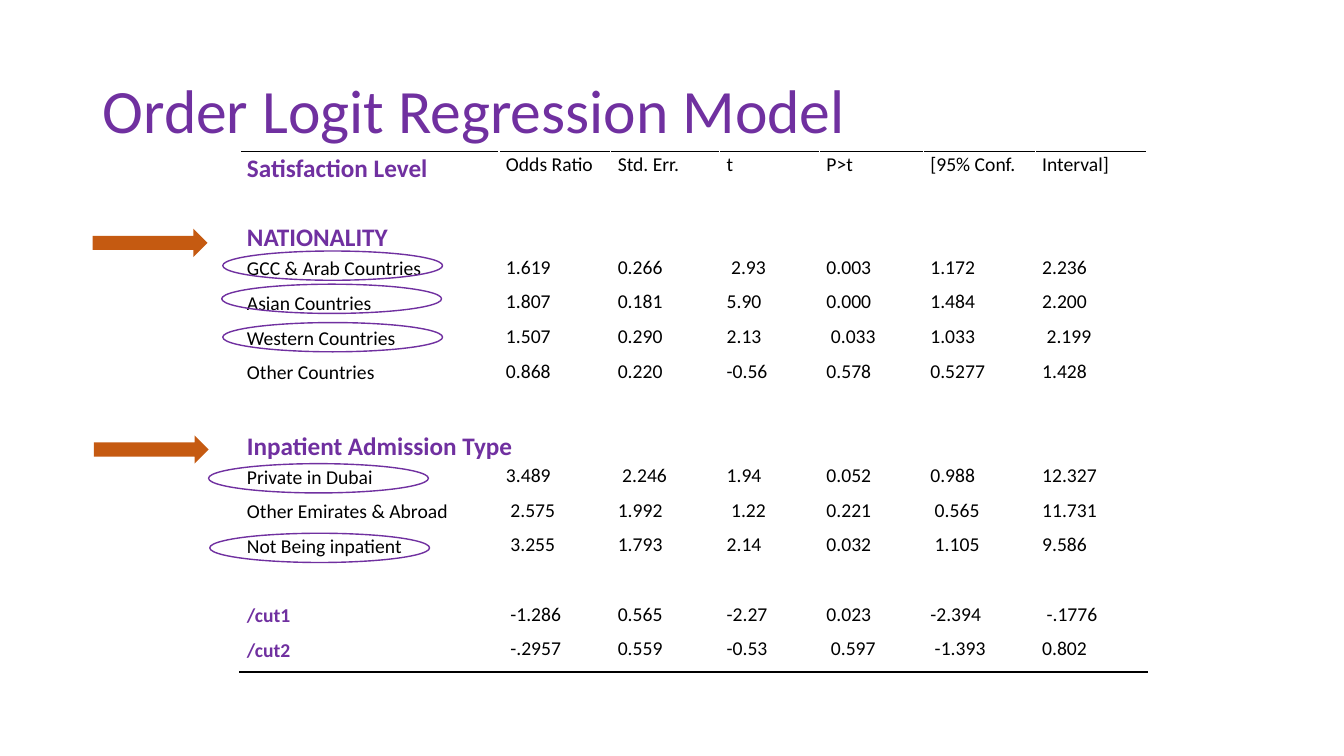
"""Builds the slide with the ordered logit regression table."""
from lxml import etree
from pptx import Presentation
from pptx.dml.color import RGBColor
from pptx.enum.shapes import MSO_SHAPE
from pptx.enum.text import MSO_ANCHOR
from pptx.oxml.ns import qn
from pptx.util import Pt

PURPLE = RGBColor(0x70, 0x30, 0xA0)
ORANGE = RGBColor(0xC5, 0x5A, 0x11)
BLACK = RGBColor(0, 0, 0)
MIDDLE = MSO_ANCHOR.MIDDLE
ARROW = MSO_SHAPE.RIGHT_ARROW
ELLIPSE = MSO_SHAPE.OVAL

TITLE_FORMAT = {"name": "Calibri", "size": Pt(44), "bold": False, "color": PURPLE}
HEADING_FORMAT = {**TITLE_FORMAT, "size": Pt(18), "bold": True}
CUT_FORMAT = {**HEADING_FORMAT, "size": Pt(14)}
BODY_FORMAT = {**CUT_FORMAT, "bold": False, "color": BLACK}

COLUMN_WIDTHS = [185, 79.9, 77.8, 71.3, 74.2, 79.9, 79.9]
ROW_HEIGHT = 24.83
HEADINGS = {"Satisfaction Level", "NATIONALITY", "Inpatient Admission Type"}
ROWS = [
    ["Satisfaction Level", "Odds Ratio", "Std. Err.", "t", "P>t", "[95% Conf.", "Interval]"],
    [],
    ["NATIONALITY"],
    ["GCC & Arab Countries", "1.619", "0.266", " 2.93", "0.003", "1.172", "2.236"],
    ["Asian Countries", "1.807", "0.181", "5.90", "0.000", "1.484", "2.200"],
    ["Western Countries", "1.507", "0.290", "2.13", " 0.033", "1.033", " 2.199"],
    ["Other Countries", "0.868", "0.220", "-0.56", "0.578", "0.5277", "1.428"],
    [],
    ["Inpatient Admission Type"],
    ["Private in Dubai", "3.489", " 2.246", "1.94", "0.052", "0.988", "12.327"],
    ["Other Emirates & Abroad", " 2.575", "1.992", " 1.22", "0.221", " 0.565", "11.731"],
    ["Not Being inpatient", " 3.255", "1.793", "2.14", "0.032", " 1.105", "9.586"],
    [],
    ["/cut1", " -1.286", "0.565", "-2.27", "0.023", "-2.394", " -.1776"],
    ["/cut2", " -.2957", "0.559", "-0.53", " 0.597", " -1.393", "0.802"],
]
ARROW_PLACES = [(66.2, 163.4), (67, 311)]
ELLIPSE_PLACES = [(159.1, 179.3), (158.4, 203), (149, 331.2), (149.8, 380.9), (159.1, 230.4)]


def set_format(font, values):
    """Apply format values to a font."""
    for name, value in values.items():
        if name == "color":
            font.color.rgb = value
        else:
            setattr(font, name, value)


def write_text(para, text, values, spacing):
    """Write one formatted span into a paragraph."""
    para.line_spacing = spacing
    span = para.add_run()
    span.text = text
    set_format(span.font, values)


def add_title(page, text):
    """Add the title box."""
    box = page.shapes.add_textbox(Pt(66.2), Pt(28.8), Pt(828), Pt(104.4))
    frame = box.text_frame
    frame.word_wrap = True
    frame.vertical_anchor = MIDDLE
    write_text(frame.paragraphs[0], text, TITLE_FORMAT, 0.9)


def add_border(cell, tag):
    """Draw a black rule on one side of a cell."""
    line = etree.Element(qn(tag), w=str(Pt(1)))
    fill = etree.SubElement(line, qn("a:solidFill"))
    etree.SubElement(fill, qn("a:srgbClr"), val=str(BLACK))
    cell._tc.get_or_add_tcPr().insert(0, line)


def clear_cell(cell):
    """Remove the fill and set tight margins."""
    cell.fill.background()
    margins = {"margin_left": 5, "margin_right": 5, "margin_top": 0, "margin_bottom": 0}
    for name, value in margins.items():
        setattr(cell, name, Pt(value))
    set_format(cell.text_frame.paragraphs[0].font, BODY_FORMAT)


def label_format(text):
    """Choose the format of a row label."""
    if text in HEADINGS:
        return HEADING_FORMAT
    return CUT_FORMAT if text.startswith("/") else BODY_FORMAT


def add_results_table(page):
    """Add the regression table."""
    width, height = sum(COLUMN_WIDTHS), ROW_HEIGHT * len(ROWS)
    table = page.shapes.add_table(
        len(ROWS), len(COLUMN_WIDTHS), Pt(171.4), Pt(108), Pt(width), Pt(height)).table
    table.first_row = table.horz_banding = False
    for column, column_width in zip(table.columns, COLUMN_WIDTHS):
        column.width = Pt(column_width)
    for row, texts in zip(table.rows, ROWS):
        row.height = Pt(ROW_HEIGHT)
        cells = list(row.cells)
        for cell in cells:
            clear_cell(cell)
        if len(texts) == 1:
            cells[0].merge(cells[-1])
        for index, (cell, text) in enumerate(zip(cells, texts)):
            values = BODY_FORMAT if index else label_format(text)
            spacing = 1.07 if index == 0 or texts is ROWS[0] else 1.0
            write_text(cell.text_frame.paragraphs[0], text, values, spacing)
    for column in range(len(COLUMN_WIDTHS)):
        add_border(table.cell(0, column), "a:lnT")
        add_border(table.cell(len(ROWS) - 1, column), "a:lnB")


def add_arrow(page, left, top):
    """Add an orange arrow that points at a section."""
    arrow = page.shapes.add_shape(ARROW, Pt(left), Pt(top), Pt(82.1), Pt(20.2))
    arrow.shadow.inherit = False
    arrow.fill.solid()
    arrow.fill.fore_color.rgb = ORANGE
    arrow.line.fill.background()


def add_ellipse(page, left, top):
    """Add a purple ring around a row label."""
    ring = page.shapes.add_shape(ELLIPSE, Pt(left), Pt(top), Pt(157), Pt(20.9))
    ring.shadow.inherit = False
    ring.fill.background()
    ring.line.color.rgb = PURPLE
    ring.line.width = Pt(1)


def main():
    """Build and save the deck."""
    deck = Presentation()
    deck.slide_width, deck.slide_height = Pt(960), Pt(540)
    page = deck.slides.add_slide(deck.slide_layouts[6])
    add_title(page, "Order Logit Regression Model")
    add_results_table(page)
    for place in ARROW_PLACES:
        add_arrow(page, *place)
    for place in ELLIPSE_PLACES:
        add_ellipse(page, *place)
    deck.save("out.pptx")


if __name__ == "__main__":
    main()
